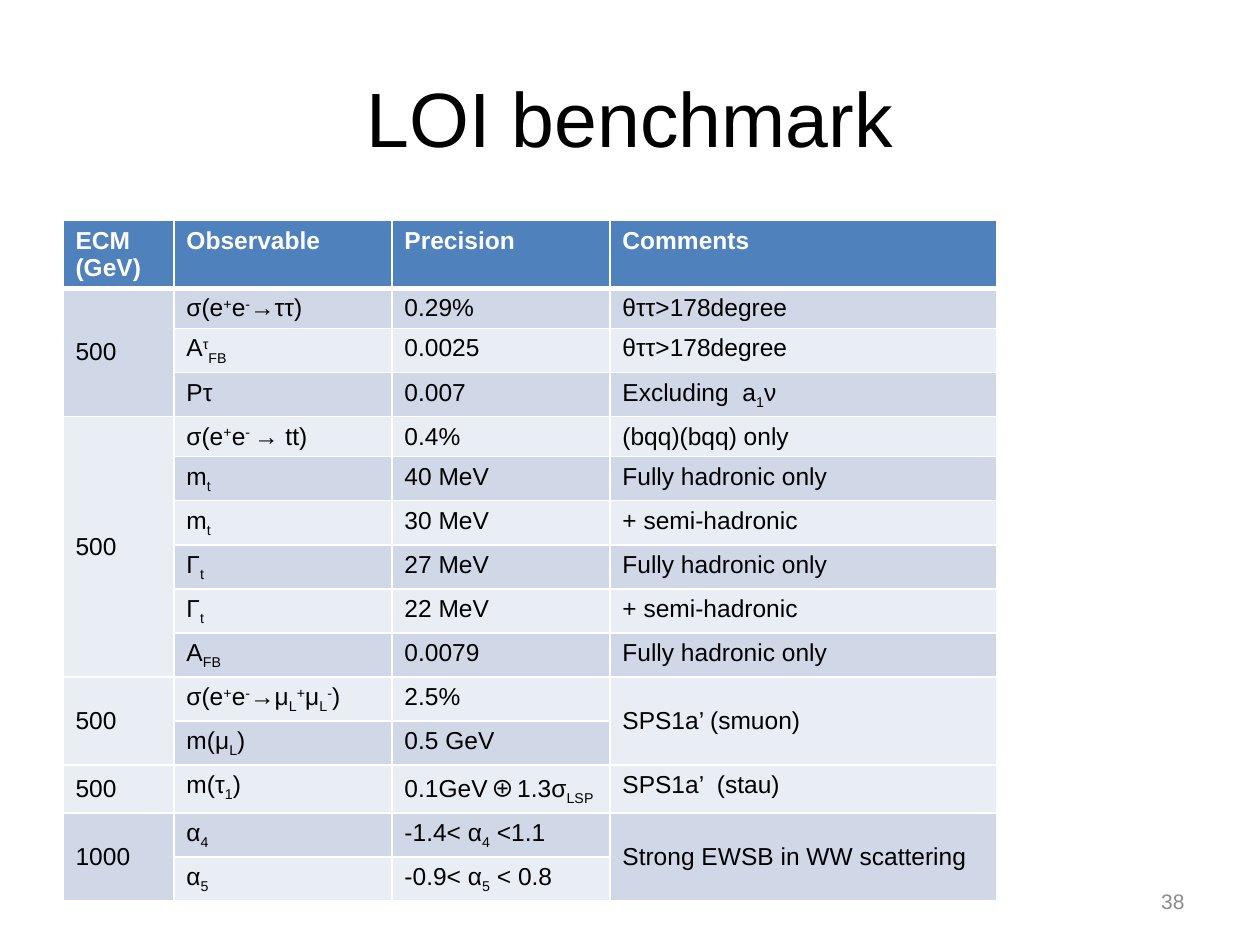
from lxml import etree
from pptx import Presentation
from pptx.dml.color import RGBColor
from pptx.enum.text import MSO_ANCHOR, PP_ALIGN
from pptx.oxml.ns import qn
from pptx.util import Inches, Pt

MIDDLE = MSO_ANCHOR.MIDDLE
CENTER, RIGHT = PP_ALIGN.CENTER, PP_ALIGN.RIGHT
BLACK = RGBColor(0x00, 0x00, 0x00)
WHITE = RGBColor(0xFF, 0xFF, 0xFF)
GRAY = RGBColor(0x8C, 0x8C, 0x8C)
HEADER_BLUE = RGBColor(0x4F, 0x81, 0xBD)
BANDS = (RGBColor(0xE9, 0xED, 0xF4), RGBColor(0xD0, 0xD8, 0xE8))
FONT, SYMBOL_FONT = "Arial", "Noto Sans Mono"
BASELINES = {"^": "30000", "_": "-25000"}

COLUMN_WIDTHS = (0.88, 1.73, 1.73, 3.07)
# ^{...} is superscript, _{...} subscript, a bare {...} the symbol font.
ROWS = [
    ("ECM (GeV)", "Observable", "Precision", "Comments"),
    ("500", "σ(e^{+}e^{-}→ττ)", "0.29%", "θττ>178degree"),
    ("", "A^{τ}_{FB}", "0.0025", "θττ>178degree"),
    ("", "Pτ", "0.007", "Excluding  a_{1}ν"),
    ("500", "σ(e^{+}e^{- }→ tt)", "0.4%", "(bqq)(bqq) only"),
    ("", "m_{t}", "40 MeV", "Fully hadronic only"),
    ("", "m_{t}", "30 MeV", "+ semi-hadronic"),
    ("", "Γ_{t}", "27 MeV", "Fully hadronic only"),
    ("", "Γ_{t}", "22 MeV", "+ semi-hadronic"),
    ("", "A_{FB}", "0.0079", "Fully hadronic only"),
    ("500", "σ(e^{+}e^{-}→μ_{L}^{+}μ_{L}^{-})", "2.5%", "SPS1a’ (smuon)"),
    ("", "m(μ_{L})", "0.5 GeV", ""),
    ("500", "m(τ_{1})", "0.1GeV{⊕}1.3σ_{LSP}", "SPS1a’  (stau)"),
    ("1000", "α_{4}", "-1.4< α_{4} <1.1", "Strong EWSB in WW scattering"),
    ("", "α_{5}", "-0.9< α_{5} < 0.8", ""),
]
# (first row, last row, column)
MERGES = [(1, 3, 0), (4, 9, 0), (10, 11, 0), (13, 14, 0), (10, 11, 3), (13, 14, 3)]


def write(frame, text, size, color=BLACK, bold=False, align=None):
    """Fill a text frame, turning the brace markup into formatted runs."""
    para = frame.paragraphs[0]
    para.alignment = align
    marker = ""
    for index, piece in enumerate(text.replace("}", "{").split("{")):
        in_braces = index % 2 == 1
        if not in_braces:
            marker = piece[-1:] if piece[-1:] in BASELINES else ""
            piece = piece.removesuffix(marker)
        if not piece:
            continue
        span = para.add_run()
        span.text = piece
        span.font.size = Pt(size)
        span.font.bold = bold
        span.font.color.rgb = color
        span.font.name = FONT
        if in_braces and marker:
            span.font._element.set("baseline", BASELINES[marker])
        elif in_braces:
            span.font.name = SYMBOL_FONT
            for tag in ("a:ea", "a:sym"):
                etree.SubElement(span.font._element, qn(tag), typeface=SYMBOL_FONT)


def add_borders(cell, **widths):
    properties = cell._tc.get_or_add_tcPr()
    for side, width in widths.items():
        line = etree.SubElement(properties, qn(f"a:ln{side}"), w=str(Pt(width)))
        fill = etree.SubElement(line, qn("a:solidFill"))
        etree.SubElement(fill, qn("a:srgbClr"), val=str(WHITE))


deck = Presentation()
deck.slide_width, deck.slide_height = Inches(10), Inches(7.5)
page = deck.slides.add_slide(deck.slide_layouts[5])

title = page.shapes.title
title.left, title.top = Inches(0.5), Inches(0.3)
title.width, title.height = Inches(9), Inches(1.25)
title.text_frame.vertical_anchor = MIDDLE
write(title.text_frame, "LOI benchmark", 44, align=CENTER)

table = page.shapes.add_table(
    len(ROWS), len(COLUMN_WIDTHS), Inches(0.5), Inches(1.75), Inches(7.41), Inches(4.24)
).table
for column, width in zip(table.columns, COLUMN_WIDTHS):
    column.width = Inches(width)
for row_index, texts in enumerate(ROWS):
    is_header = row_index == 0
    table.rows[row_index].height = Inches(0.46 if is_header else 0.27)
    for column_index, text in enumerate(texts):
        cell = table.cell(row_index, column_index)
        add_borders(cell, L=1, R=1, T=3 if row_index == 1 else 1, B=3 if is_header else 1)
        cell.fill.solid()
        cell.fill.fore_color.rgb = HEADER_BLUE if is_header else BANDS[row_index % 2]
        if column_index == 0 and not is_header:
            cell.vertical_anchor = MIDDLE
        write(cell.text_frame, text, 14, color=WHITE if is_header else BLACK, bold=is_header)
for first, last, column_index in MERGES:
    cell = table.cell(first, column_index)
    cell.merge(table.cell(last, column_index))
    cell.vertical_anchor = MIDDLE

number_box = page.shapes.add_textbox(Inches(7.17), Inches(6.95), Inches(2.33), Inches(0.4))
number_box.text_frame.word_wrap = True
number_box.text_frame.vertical_anchor = MIDDLE
write(number_box.text_frame, "38", 12, color=GRAY, align=RIGHT)

deck.save("out.pptx")
